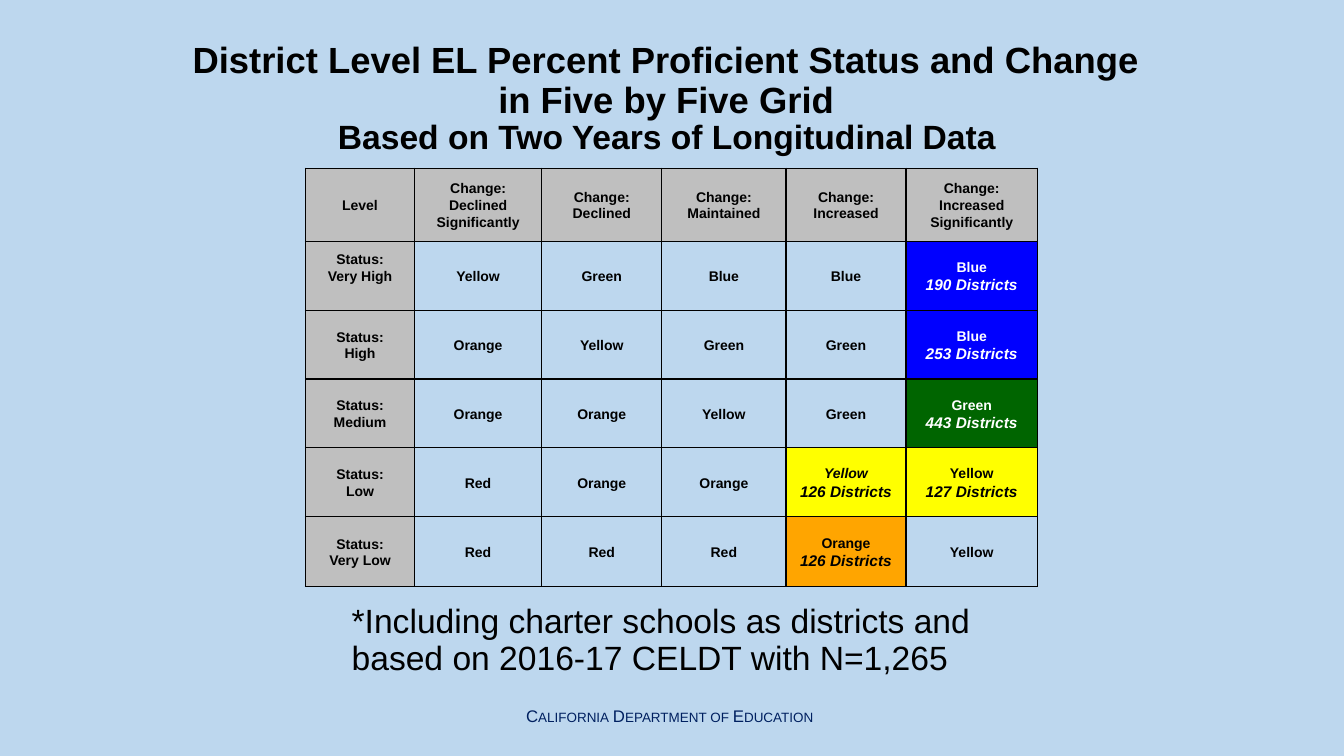
from dataclasses import dataclass

from lxml import etree
from pptx import Presentation
from pptx.dml.color import RGBColor
from pptx.enum.text import MSO_ANCHOR, MSO_AUTO_SIZE, PP_ALIGN
from pptx.oxml.ns import qn
from pptx.util import Inches, Pt

CENTER, LEFT = PP_ALIGN.CENTER, PP_ALIGN.LEFT
MIDDLE, TOP = MSO_ANCHOR.MIDDLE, MSO_ANCHOR.TOP
GROW, FIXED = MSO_AUTO_SIZE.SHAPE_TO_FIT_TEXT, MSO_AUTO_SIZE.NONE
TITLE_ONLY = 5
WIDE, HIGH = Inches(13.33), Inches(7.5)


@dataclass(frozen=True)
class Theme:
    font: str = "Arial"
    back: str = "BDD7EE"
    ink: str = "000000"
    pale: str = "FFFFFF"
    navy: str = "002060"
    gray: str = "BFBFBF"
    blue: str = "0000FF"
    green: str = "006500"
    yellow: str = "FFFF00"
    orange: str = "FFA500"
    head: int = 26
    sub: int = 24
    note: int = 24
    cell: int = 10
    count: int = 11
    foot: int = 12


THEME = Theme()

COLS = [108, 126, 119, 123, 119, 130]
ROWS = [72, 68, 68, 68, 68, 69]
GRID = [
    ["Level", "Change: Declined Significantly", "Change: Declined",
     "Change: Maintained", "Change: Increased", "Change:|Increased Significantly"],
    ["Status:|Very High", "Yellow", "Green", "Blue", "Blue", "Blue|190 Districts"],
    ["Status:|High", "Orange", "Yellow", "Green", "Green", "Blue|253 Districts"],
    ["Status:|Medium", "Orange", "Orange", "Yellow", "Green", "Green|443 Districts"],
    ["Status:|Low", "Red", "Orange", "Orange", "Yellow|126 Districts",
     "Yellow|127 Districts"],
    ["Status:|Very Low", "Red", "Red", "Red", "Orange|126 Districts", "Yellow"],
]
# Fill and text colour of cells that hold a district count
LEVELS = {
    "Blue": (THEME.blue, THEME.pale),
    "Green": (THEME.green, THEME.pale),
    "Yellow": (THEME.yellow, THEME.ink),
    "Orange": (THEME.orange, THEME.ink),
}
SLANTED = (4, 4)  # the one cell whose level name is italic too
RAISED = (1, 0)   # the one label set above the middle


def share(left, top, width, height):
    """Turn percentages of the slide into a box."""
    return (int(WIDE * left / 100), int(HIGH * top / 100),
            int(WIDE * width / 100), int(HIGH * height / 100))


def add_run(para, text, size, color=THEME.ink, bold=False, italic=False):
    run = para.add_run()
    run.text = text
    font = run.font
    font.name, font.size = THEME.font, Pt(size)
    font.bold, font.italic = bold, italic
    font.color.rgb = RGBColor.from_string(color)
    return run


def add_title(slide, box):
    title = slide.shapes.title
    title.left, title.top, title.width, title.height = box
    frame = title.text_frame
    frame.word_wrap, frame.auto_size = True, FIXED
    frame.vertical_anchor = MIDDLE
    para = frame.paragraphs[0]
    para.alignment, para.line_spacing = CENTER, 0.9
    for text, size in (
        ("District Level EL Percent Proficient Status and Change ", THEME.head),
        ("in Five by Five Grid ", THEME.head),
        ("Based on Two Years of Longitudinal Data ", THEME.sub),
    ):
        if para.runs:
            para.add_line_break()
        add_run(para, text, size, bold=True)


def add_border(cell):
    props = cell._tc.get_or_add_tcPr()
    for side in ("a:lnL", "a:lnR", "a:lnT", "a:lnB"):
        line = etree.SubElement(props, qn(side), w=str(Pt(1)))
        fill = etree.SubElement(line, qn("a:solidFill"))
        etree.SubElement(fill, qn("a:srgbClr"), val=THEME.ink)


def fill_cell(cell, text, spot):
    row, col = spot
    label = row == 0 or col == 0
    lines = text.split("|")
    fill, ink = None, THEME.ink
    if label:
        fill = THEME.gray
    elif len(lines) > 1:
        fill, ink = LEVELS[lines[0]]

    add_border(cell)
    if fill:
        cell.fill.solid()
        cell.fill.fore_color.rgb = RGBColor.from_string(fill)
    else:
        cell.fill.background()

    cell.vertical_anchor = MIDDLE
    cell.margin_left = cell.margin_right = Inches(0.06)
    cell.margin_top = Inches(0.01)
    cell.margin_bottom = Inches(0.17 if spot == RAISED else 0)
    frame = cell.text_frame
    for step, line in enumerate(lines):
        para = frame.add_paragraph() if step else frame.paragraphs[0]
        para.alignment, para.line_spacing = CENTER, 1.07
        count = step > 0 and not label
        add_run(para, line, THEME.count if count else THEME.cell, ink,
                bold=True, italic=count or spot == SLANTED)


def add_grid(slide, box):
    table = slide.shapes.add_table(len(ROWS), len(COLS), *box).table
    table.first_row = table.horz_banding = False
    for col, part in zip(table.columns, COLS):
        col.width = int(box[2] * part / sum(COLS))
    for row, part in zip(table.rows, ROWS):
        row.height = int(box[3] * part / sum(ROWS))
    for r, texts in enumerate(GRID):
        for c, text in enumerate(texts):
            fill_cell(table.cell(r, c), text, (r, c))


def add_text(slide, box, text, size, color, wrap, fit, space):
    frame = slide.shapes.add_textbox(*box).text_frame
    frame.word_wrap, frame.auto_size = wrap, fit
    frame.vertical_anchor = TOP
    para = frame.paragraphs[0]
    para.alignment, para.line_spacing = LEFT, space
    return add_run(para, text, size, color)


def add_note(slide, box):
    add_text(slide, box, "*Including charter schools as districts and "
             "based on 2016-17 CELDT with N=1,265",
             THEME.note, THEME.ink, True, FIXED, 0.9)


def add_foot(slide, box):
    run = add_text(slide, box, "California Department of Education",
                   THEME.foot, THEME.navy, False, GROW, 1.0)
    run.font._element.set("cap", "small")


def main():
    deck = Presentation()
    deck.slide_width, deck.slide_height = WIDE, HIGH
    slide = deck.slides.add_slide(deck.slide_layouts[TITLE_ONLY])
    back = slide.background.fill
    back.solid()
    back.fore_color.rgb = RGBColor.from_string(THEME.back)

    # Regions, in percent of the slide
    add_foot(slide, share(38.41, 92.67, 23.18, 4))
    add_title(slide, share(3.38, 2.4, 93.17, 21.6))
    add_grid(slide, share(22.73, 22.27, 54.46, 55.33))
    add_note(slide, share(25.43, 79.33, 53.41, 11.73))
    deck.save("out.pptx")


if __name__ == "__main__":
    main()
